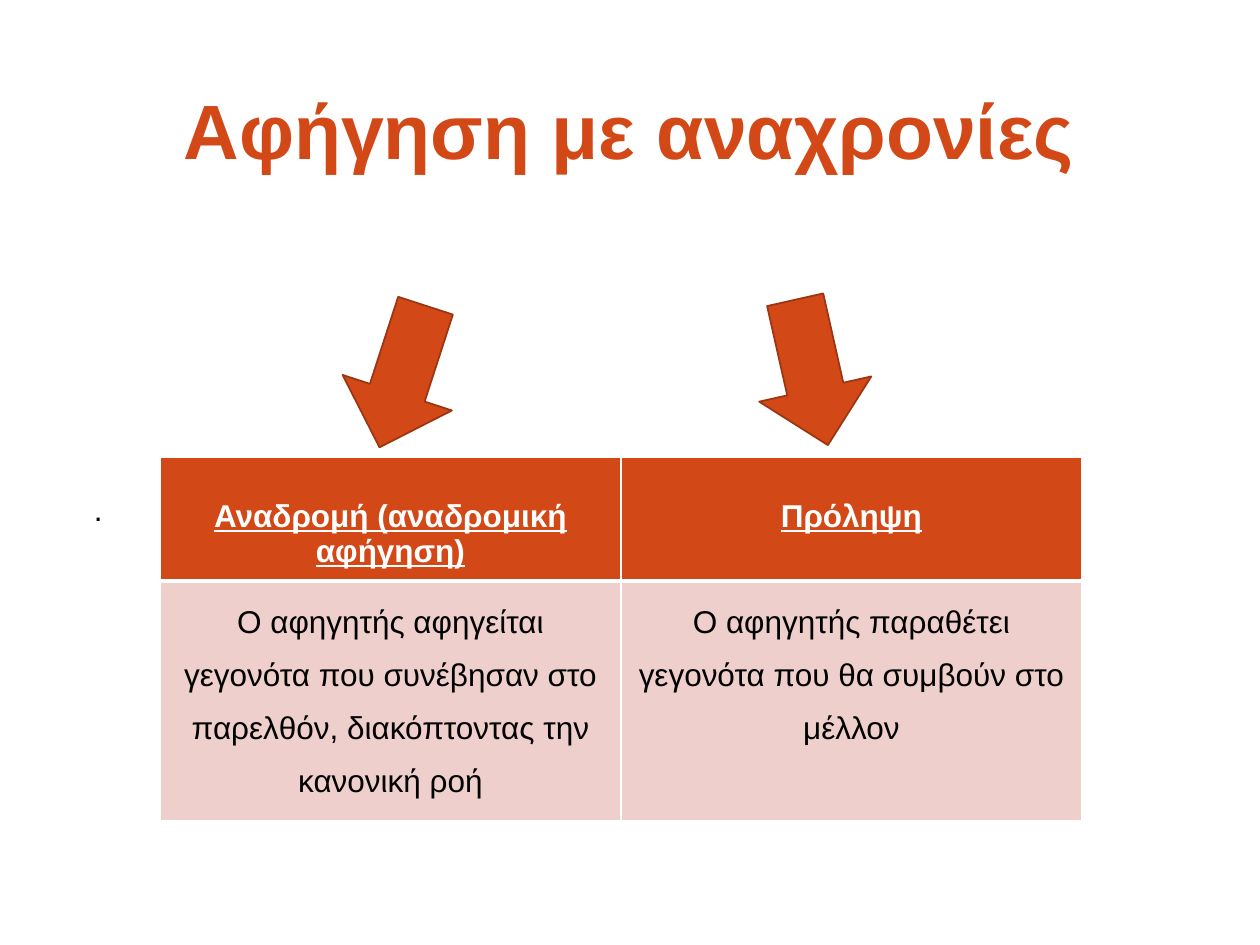
from dataclasses import dataclass

import pptx
import pptx.dml.color
import pptx.enum.shapes
import pptx.enum.text
import pptx.oxml.ns
import pptx.util
from lxml import etree

EMU_PER_PX = 914400 // 126
ALIGN = pptx.enum.text.PP_ALIGN
ANCHOR = pptx.enum.text.MSO_ANCHOR


@dataclass(frozen=True)
class Theme:
    font: str = "Arial"
    accent: str = "D34817"
    outline: str = "9C3511"
    tint: str = "EFCFCC"
    white: str = "FFFFFF"
    black: str = "000000"
    title_size: int = 44
    body_size: int = 18


THEME = Theme()
TITLE_FORMAT = {"size": THEME.title_size, "color": THEME.accent, "bold": True}
HEADER_FORMAT = {"size": THEME.body_size, "color": THEME.white,
                 "bold": True, "underline": True}
BODY_FORMAT = {"size": THEME.body_size, "color": THEME.black, "bold": False}

COLUMNS = [
    ("Αναδρομή (αναδρομική αφήγηση)",
     "Ο αφηγητής αφηγείται γεγονότα που συνέβησαν στο παρελθόν, "
     "διακόπτοντας την κανονική ροή"),
    ("Πρόληψη",
     "Ο αφηγητής παραθέτει γεγονότα που θα συμβούν στο μέλλον"),
]
ROW_HEIGHTS = (123, 230)
COLUMN_WIDTH = 461


def px(*values):
    return [pptx.util.Emu(v * EMU_PER_PX) for v in values]


def rgb(color):
    return pptx.dml.color.RGBColor.from_string(color)


def write(tf, text, fmt, align=ALIGN.CENTER, spacing=1.0):
    p = tf.paragraphs[0]
    p.alignment = align
    p.line_spacing = spacing
    r = p.add_run()
    r.text = text
    values = {**fmt, "name": THEME.font, "size": pptx.util.Pt(fmt["size"])}
    r.font.color.rgb = rgb(values.pop("color"))
    for name, value in values.items():
        setattr(r.font, name, value)


def add_text(slide, box, text, fmt, anchor=ANCHOR.TOP, **layout):
    tf = slide.shapes.add_textbox(*px(*box)).text_frame
    tf.word_wrap = True
    tf.vertical_anchor = anchor
    for side in ("left", "top", "right", "bottom"):
        setattr(tf, f"margin_{side}", 0)
    write(tf, text, fmt, **layout)


def add_arrow(slide, left, top, rotation):
    sp = slide.shapes.add_shape(
        pptx.enum.shapes.MSO_SHAPE.RIGHT_ARROW, *px(left, top, 149, 115))
    sp.rotation = rotation
    sp.shadow.inherit = False
    sp.fill.solid()
    sp.fill.fore_color.rgb = rgb(THEME.accent)
    sp.line.color.rgb = rgb(THEME.outline)
    sp.line.width = pptx.util.Pt(1)


def set_borders(cell, widths):
    """Draw white borders; widths maps L, R, T and B to points."""
    qn = pptx.oxml.ns.qn
    tc_pr = cell._tc.get_or_add_tcPr()
    for side, width in widths.items():
        ln = etree.SubElement(tc_pr, qn(f"a:ln{side}"), w=str(pptx.util.Pt(width)))
        fill = etree.SubElement(ln, qn("a:solidFill"))
        etree.SubElement(fill, qn("a:srgbClr"), val=THEME.white)


def fill_cell(cell, text, fmt, color, borders, spacing=1.0):
    set_borders(cell, borders)
    cell.fill.solid()
    cell.fill.fore_color.rgb = rgb(color)
    write(cell.text_frame, text, fmt, spacing=spacing)


def add_comparison(slide, left, top):
    width, height = COLUMN_WIDTH * len(COLUMNS), sum(ROW_HEIGHTS)
    table = slide.shapes.add_table(
        len(ROW_HEIGHTS), len(COLUMNS), *px(left, top, width, height)).table
    for row, row_height in zip(table.rows, ROW_HEIGHTS):
        row.height = px(row_height)[0]
    for i, (header, body) in enumerate(COLUMNS):
        table.columns[i].width = px(COLUMN_WIDTH)[0]
        head = table.cell(0, i)
        fill_cell(head, header, HEADER_FORMAT, THEME.accent,
                  {"L": 1, "R": 1, "T": 1, "B": 3})
        head.margin_top = px(42)[0]
        fill_cell(table.cell(1, i), body, BODY_FORMAT, THEME.tint,
                  {"L": 1, "R": 1, "T": 3, "B": 1}, spacing=1.5)


def main():
    prs = pptx.Presentation()
    prs.slide_width, prs.slide_height = px(1260, 945)
    slide = prs.slides.add_slide(prs.slide_layouts[6])
    add_text(slide, (94, 490, 40, 36), ".", BODY_FORMAT, align=ALIGN.LEFT)
    add_text(slide, (94, 71, 1071, 127), "Αφήγηση με αναχρονίες",
             TITLE_FORMAT, anchor=ANCHOR.MIDDLE, spacing=0.9)
    add_arrow(slide, 737, 315, 77.3)
    add_arrow(slide, 328, 319, 108)
    add_comparison(slide, 160, 457)
    prs.save("out.pptx")


if __name__ == "__main__":
    main()
